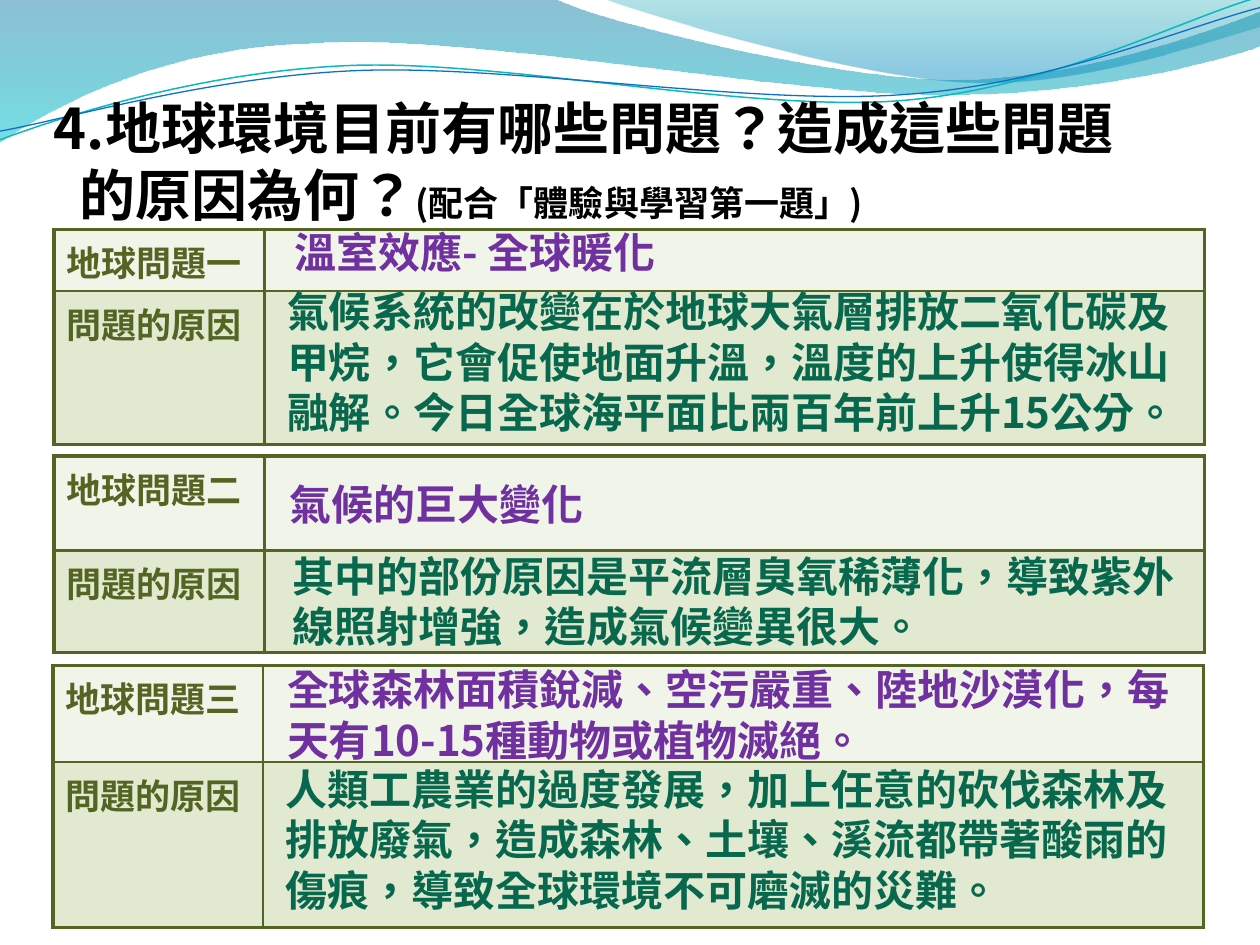
from dataclasses import dataclass
from math import cos, radians, sin

from lxml.etree import SubElement
from pptx import Presentation
from pptx.dml.color import RGBColor
from pptx.enum.lang import MSO_LANGUAGE_ID as Language
from pptx.enum.text import MSO_AUTO_SIZE as AutoSize
from pptx.oxml.ns import qn
from pptx.util import Pt

PX = 9144  # 100 px to the inch
FONT = "Noto Sans CJK SC"
OLIVE, PURPLE, GREEN, BLACK = "546422", "7030A0", "08684E", "000000"
ROW_FILLS = ("F0F4E9", "E1E9D0")
COLUMNS = (167, 746)
LINE_HEIGHT = 1.2
TILT = 357.3

Point = tuple[int, int]


@dataclass
class Wave:
    """An outline of straight (one point) and cubic (three point) steps."""
    start: Point
    steps: list[tuple[Point, ...]]
    stops: tuple[tuple[int, str, int], ...] = ()  # position %, colour, opacity %
    line: str = ""
    weight: float = 0
    centre: Point = (0, 0)
    rotation: float = 0


@dataclass
class ProblemTable:
    left: int
    top: int
    rows: tuple[int, int]
    label: str


@dataclass
class Answer:
    left: int
    top: int
    width: int
    height: int
    text: str
    colour: str


WAVES = [
    Wave((0, 0), [
        ((440, -1),),
        ((476, 17), (664, 63), (758, 63)),
        ((853, 63), (958, 26), (1000, 9)),
        ((1001, 36),),
        ((983, 44), (870, 76), (746, 75)),
        ((622, 75), (382, 28), (257, 34)),
        ((129, 36), (46, 83), (-1, 113)),
        ((0, 0),),
    ], stops=((0, "0074A1", 45), (100, "00C6CF", 55))),
    Wave((479, -1), [
        ((509, 11), (682, 62), (769, 65)),
        ((856, 69), (961, 32), (1000, 21)),
        ((1000, 0),),
        ((479, -1),),
    ], stops=((0, "00A1A9", 30), (80, "008BBF", 45))),
    Wave((0, 111), [
        ((48, 93), (158, 57), (277, 52)),
        ((395, 47), (593, 89), (713, 80)),
        ((833, 71), (938, 15), (998, -2)),
    ], line="0AB8BF", weight=0.85, centre=(499, 57), rotation=TILT),
    Wave((0, 104), [
        ((47, 96), (164, 61), (283, 56)),
        ((403, 51), (597, 84), (717, 75)),
        ((836, 67), (941, 21), (1000, 6)),
    ], line="0F6FC6", weight=0.75, centre=(499, 59), rotation=TILT),
]

TABLES = [
    ProblemTable(43, 182, (49, 122), "地球問題一"),
    ProblemTable(43, 362, (75, 81), "地球問題二"),
    ProblemTable(42, 528, (77, 131), "地球問題三"),
]

ANSWERS = [
    Answer(224, 175, 370, 50, "溫室效應- 全球暖化", PURPLE),
    Answer(218, 222, 737, 131,
           "氣候系統的改變在於地球大氣層排放二氧化碳及甲烷，它會促使地面升溫，"
           "溫度的上升使得冰山融解。今日全球海平面比兩百年前上升15公分。", GREEN),
    Answer(218, 522, 750, 91,
           "全球森林面積銳減、空污嚴重、陸地沙漠化，每天有10-15種動物或植物滅絕。", PURPLE),
    Answer(217, 601, 745, 131,
           "人類工農業的過度發展，加上任意的砍伐森林及排放廢氣，造成森林、土壤、"
           "溪流都帶著酸雨的傷痕，導致全球環境不可磨滅的災難。", GREEN),
    Answer(220, 375, 318, 50, "氣候的巨大變化", PURPLE),
    Answer(222, 432, 724, 91,
           "其中的部份原因是平流層臭氧稀薄化，導致紫外線照射增強，造成氣候變異很大。", GREEN),
]


def rgb(colour: str) -> RGBColor:
    return RGBColor.from_string(colour)


def level(point: Point, wave: Wave) -> tuple[int, int]:
    """Return the EMU place of a point before the wave's rotation is applied."""
    angle = radians(-wave.rotation)
    dx, dy = point[0] - wave.centre[0], point[1] - wave.centre[1]
    return (round((wave.centre[0] + dx * cos(angle) - dy * sin(angle)) * PX),
            round((wave.centre[1] + dx * sin(angle) + dy * cos(angle)) * PX))


def bend(shape, steps) -> None:
    """Join the line segments of each three point step into one cubic curve."""
    segments = iter(list(shape._element.iter(qn("a:lnTo"))))
    for step in steps:
        first = next(segments)
        if len(step) == 3:
            first.tag = qn("a:cubicBezTo")
            for _ in range(2):
                segment = next(segments)
                first.append(segment[0])
                segment.getparent().remove(segment)


def fill_downwards(shape, stops) -> None:
    """Fill with a top-to-bottom gradient of translucent colours."""
    shape.fill.gradient()
    gradient = shape._element.spPr.find(qn("a:gradFill"))
    for child in list(gradient):
        gradient.remove(child)
    stop_list = SubElement(gradient, qn("a:gsLst"))
    for position, colour, opacity in stops:
        stop = SubElement(stop_list, qn("a:gs"), pos=str(position * 1000))
        value = SubElement(stop, qn("a:srgbClr"), val=colour)
        SubElement(value, qn("a:alpha"), val=str(opacity * 1000))
    SubElement(gradient, qn("a:lin"), ang="5400000", scaled="0")


def draw_wave(slide, wave: Wave) -> None:
    builder = slide.shapes.build_freeform(*level(wave.start, wave))
    points = [level(point, wave) for step in wave.steps for point in step]
    builder.add_line_segments(points, close=bool(wave.stops))
    shape = builder.convert_to_shape()
    bend(shape, wave.steps)
    shape.rotation = wave.rotation
    shape.shadow.inherit = False
    if wave.stops:
        fill_downwards(shape, wave.stops)
        shape.line.fill.background()
    else:
        shape.fill.background()
        shape.line.color.rgb = rgb(wave.line)
        shape.line.width = Pt(wave.weight)


def format_run(run, size: int, colour: str) -> None:
    run.font.size, run.font.bold, run.font.name = Pt(size), True, FONT
    run.font.language_id = Language.TRADITIONAL_CHINESE
    run.font.color.rgb = rgb(colour)
    SubElement(run._r.rPr, qn("a:ea"), typeface=FONT)


def add_text_frame(slide, left: int, top: int, width: int, height: int):
    frame = slide.shapes.add_textbox(left * PX, top * PX, width * PX, height * PX).text_frame
    frame.word_wrap = True
    frame.auto_size = AutoSize.SHAPE_TO_FIT_TEXT
    return frame


def draw_title(slide) -> None:
    frame = add_text_frame(slide, 0, 69, 913, 118)
    frame.text = "4.地球環境目前有哪些問題？造成這些問題\n的原因為何？"
    frame.paragraphs[1].add_run().text = "(配合「體驗與學習第一題」)"
    for paragraph, indent, sizes in zip(frame.paragraphs, (33, 53), ((32,), (32, 20))):
        paragraph._p.get_or_add_pPr().set("marL", str(indent * PX))
        paragraph.line_spacing = Pt(32 * LINE_HEIGHT)
        for run, size in zip(paragraph.runs, sizes):
            format_run(run, size, BLACK)


def draw_answer(slide, answer: Answer) -> None:
    frame = add_text_frame(slide, answer.left, answer.top, answer.width, answer.height)
    frame.text = answer.text
    paragraph = frame.paragraphs[0]
    paragraph.line_spacing = Pt(24 * LINE_HEIGHT)
    format_run(paragraph.runs[0], 24, answer.colour)


def draw_table(slide, problem: ProblemTable) -> None:
    """Draw a two by two grid with thick outer and thin inner borders."""
    table = slide.shapes.add_table(2, 2, problem.left * PX, problem.top * PX,
                                   sum(COLUMNS) * PX, sum(problem.rows) * PX).table
    for column, width in zip(table.columns, COLUMNS):
        column.width = width * PX
    for r, (height, label) in enumerate(zip(problem.rows, (problem.label, "問題的原因"))):
        table.rows[r].height = height * PX
        for c in range(2):
            cell = table.cell(r, c)
            outer = {"L": c == 0, "R": c == 1, "T": r == 0, "B": r == 1}
            for side, is_outer in outer.items():
                border = SubElement(cell._tc.get_or_add_tcPr(), qn(f"a:ln{side}"),
                                    w=str(Pt(2.25 if is_outer else 1.5)))
                SubElement(SubElement(border, qn("a:solidFill")), qn("a:srgbClr"), val=OLIVE)
            cell.fill.solid()
            cell.fill.fore_color.rgb = rgb(ROW_FILLS[r])
        table.cell(r, 0).text_frame.text = label
        format_run(table.cell(r, 0).text_frame.paragraphs[0].runs[0], 20, OLIVE)


def main() -> None:
    deck = Presentation()
    deck.slide_width, deck.slide_height = 1000 * PX, 750 * PX
    slide = deck.slides.add_slide(deck.slide_layouts[6])
    for wave in WAVES:
        draw_wave(slide, wave)
    draw_title(slide)
    for problem in TABLES:
        draw_table(slide, problem)
    for answer in ANSWERS:
        draw_answer(slide, answer)
    deck.save("out.pptx")


if __name__ == "__main__":
    main()
